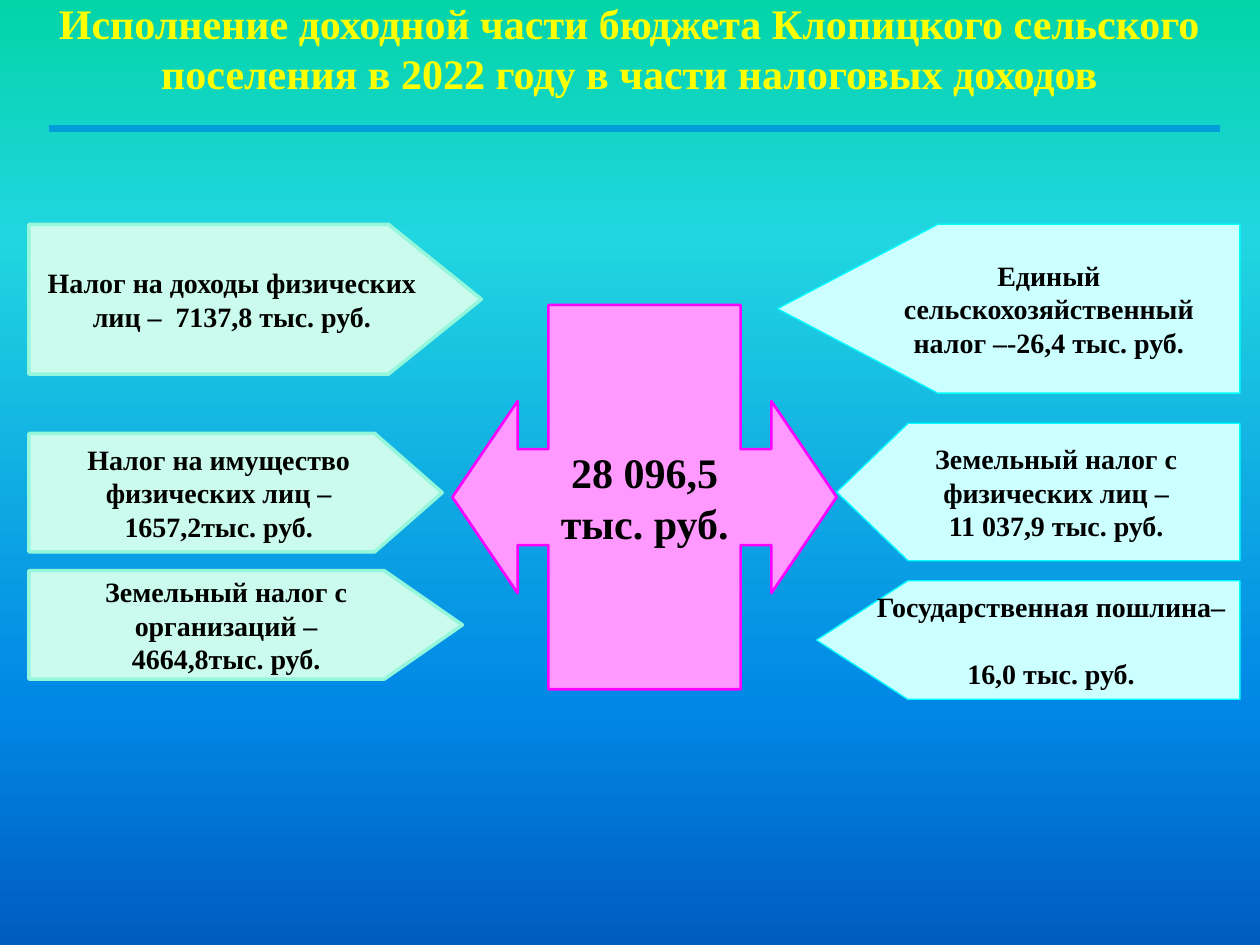
from copy import deepcopy

from pptx import Presentation
from pptx.dml.color import RGBColor
from pptx.enum.shapes import MSO_CONNECTOR, MSO_SHAPE
from pptx.enum.text import MSO_ANCHOR, MSO_AUTO_SIZE, PP_ALIGN
from pptx.oxml.ns import qn
from pptx.util import Inches, Pt

COLORS = {
    "title": "FFFF00", "text": "000000", "rule": "009DD9",
    "left_fill": "CAFBED", "left_line": "94F7DC",
    "right_fill": "CCFFFF", "right_line": "00FFFF",
    "total_fill": "FF99FF", "total_line": "FF00FF",
}
BACKGROUND = [(0, "03D4A8"), (0.25, "21D6E0"), (0.75, "0087E6"), (1, "005CBF")]
FONT = "Times New Roman"
TITLE = ("Исполнение доходной части бюджета Клопицкого сельского "
         "поселения в 2022 году в части налоговых доходов")
TOTAL = ["28 096,5", "тыс. руб."]

# Paragraphs, top, width, height, point depth, gap between paragraphs (pt)
LEFT_TAXES = [
    (["Налог на доходы физических лиц –  7137,8 тыс. руб."], 1.78, 3.59, 1.19, 0.62, 0),
    (["Налог на имущество физических лиц –", "1657,2тыс. руб."], 3.44, 3.28, 0.94, 0.57, 0),
    (["Земельный налог с организаций –", "4664,8тыс. руб."], 4.53, 3.44, 0.86, 0.72, 0),
]
RIGHT_TAXES = [
    (["Единый сельскохозяйственный налог –-26,4 тыс. руб."], 1.78, 3.67, 1.34, 0.95, 0),
    (["Земельный налог с физических лиц –", "11 037,9 тыс. руб."], 3.36, 3.2, 1.09, 0.52, 0),
    (["Государственная пошлина–", "16,0 тыс. руб."], 4.61, 3.36, 0.94, 0.77, 19),
]
LEFT_EDGE, RIGHT_EDGE = 0.23, 9.84


def rgb(name):
    return RGBColor.from_string(COLORS[name])


def write(tf, lines, size, color="text", anchor=MSO_ANCHOR.MIDDLE, wrap=True, gap=0):
    tf.word_wrap = wrap
    tf.auto_size = MSO_AUTO_SIZE.NONE
    tf.vertical_anchor = anchor
    for i, line in enumerate(lines):
        p = tf.add_paragraph() if i else tf.paragraphs[0]
        p.alignment = PP_ALIGN.CENTER
        p.space_before = Pt(gap if i else 0)
        r = p.add_run()
        r.text = line
        r.font.name, r.font.size, r.font.bold = FONT, Pt(size), True
        r.font.color.rgb = rgb(color)


def add_block(s, kind, box, adjustments, style, line_width, rotation=0):
    sp = s.shapes.add_shape(kind, *map(Inches, box))
    for i, value in enumerate(adjustments):
        sp.adjustments[i] = value
    sp.rotation = rotation
    sp.shadow.inherit = False
    sp.fill.solid()
    sp.fill.fore_color.rgb = rgb(style + "_fill")
    sp.line.color.rgb = rgb(style + "_line")
    sp.line.width = Pt(line_width)
    return sp


def body_props(sp):
    return sp.text_frame._txBody.find(qn("a:bodyPr"))


def add_tax(s, tax, side):
    lines, top, width, height, point, gap = tax
    is_left = side == "left"
    left = LEFT_EDGE if is_left else RIGHT_EDGE - width
    sp = add_block(s, MSO_SHAPE.PENTAGON, (left, top, width, height), [point], side,
                   2 if is_left else 0.75, 0 if is_left else 180)
    write(sp.text_frame, lines, 16, gap=gap)
    if not is_left:
        body_props(sp).set("rot", str(180 * 60000))  # keeps the text upright


def paint_background(s):
    fill = s.background.fill
    fill.gradient()
    fill.gradient_angle = 270
    stops = s._element.find(".//" + qn("a:gsLst"))
    while len(stops) < len(BACKGROUND):
        stops.append(deepcopy(stops[0]))
    for stop, (position, color) in zip(fill.gradient_stops, BACKGROUND):
        stop.position = position
        stop.color.rgb = RGBColor.from_string(color)


def main():
    prs = Presentation()
    prs.slide_width, prs.slide_height = Inches(10), Inches(7.5)
    s = prs.slides.add_slide(prs.slide_layouts[5])
    paint_background(s)

    title = s.shapes.title
    title.left, title.top, title.width, title.height = map(Inches, (0.23, 0.16, 9.53, 0.62))
    tf = title.text_frame
    tf.margin_left = tf.margin_right = tf.margin_bottom = 0
    write(tf, [TITLE], 24, color="title", anchor=MSO_ANCHOR.BOTTOM)

    rule = s.shapes.add_connector(MSO_CONNECTOR.STRAIGHT, *map(Inches, (0.39, 1.02, 9.68, 1.02)))
    rule.line.color.rgb = rgb("rule")
    rule.line.width = Pt(3.75)
    sp_pr = rule._element.spPr
    sp_pr.append(sp_pr.makeelement(qn("a:effectLst"), {}))

    total = add_block(s, MSO_SHAPE.UP_DOWN_ARROW_CALLOUT, (3.59, 2.42, 3.05, 3.05),
                      [0.25, 0.25, 0.17, 0.5], "total", 1.5, 270)
    write(total.text_frame, TOTAL, 24, wrap=False)
    body_props(total).set("vert", "eaVert")

    for side, taxes in (("left", LEFT_TAXES), ("right", RIGHT_TAXES)):
        for tax in taxes:
            add_tax(s, tax, side)

    prs.save("out.pptx")


if __name__ == "__main__":
    main()
